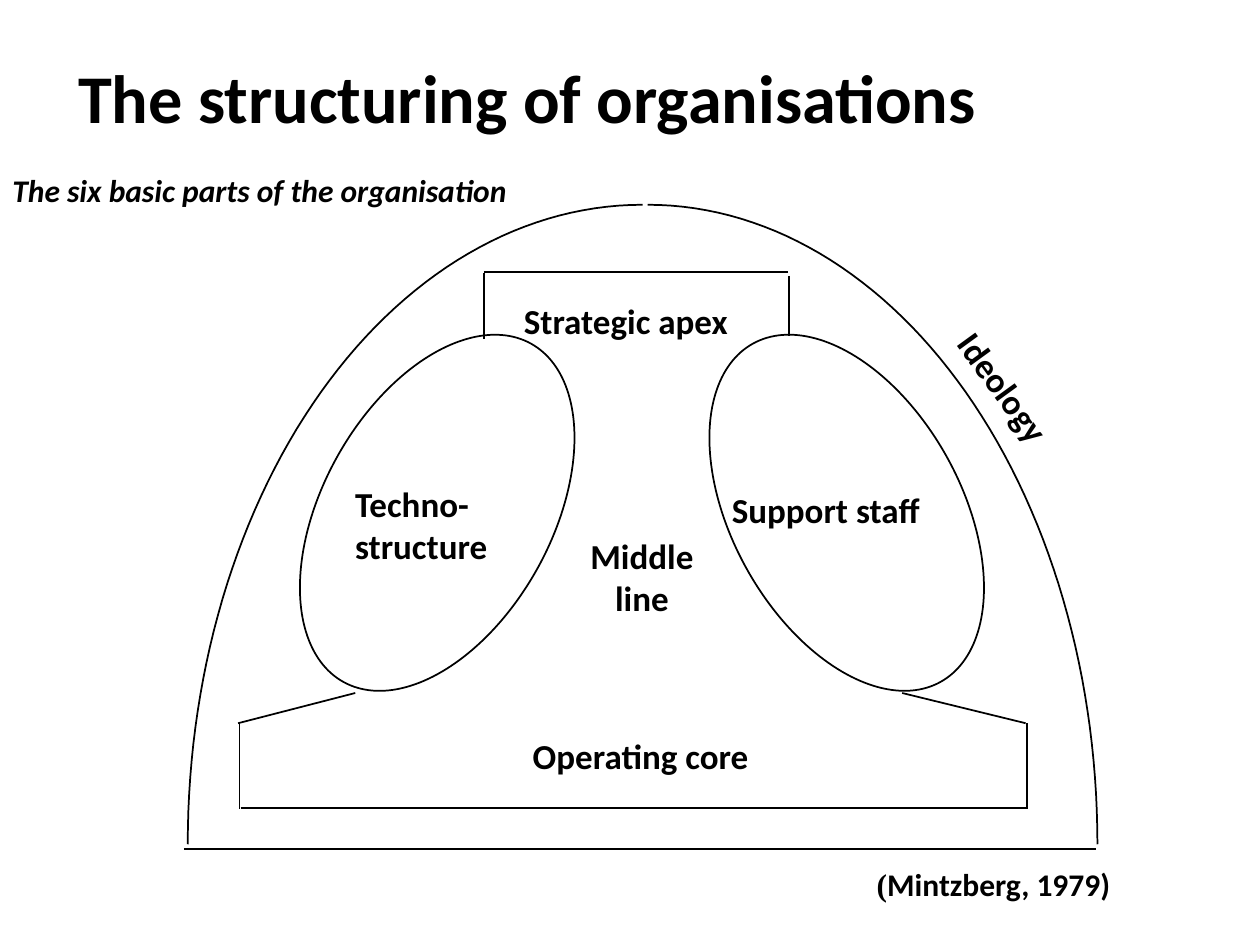
import math

import pptx
import pptx.dml.color
import pptx.enum.shapes
import pptx.enum.text
import pptx.oxml
import pptx.oxml.ns
import pptx.util

COLORS = {"ink": "000000"}
COLUMNS, ROWS = 100, 75
TITLE_ONLY = 5


class Diagram:
    """Style and current slide; all lengths are grid columns and rows."""

    font = "Calibri"
    line_width = pptx.util.Pt(1)
    ink = pptx.dml.color.RGBColor.from_string(COLORS["ink"])

    def __init__(self, deck):
        self.slide = deck.slides.add_slide(deck.slide_layouts[TITLE_ONLY])
        self.column = deck.slide_width / COLUMNS
        self.row = deck.slide_height / ROWS

    def place(self, x, y):
        return round(x * self.column), round(y * self.row)

    def outline(self, shape):
        shape.line.color.rgb = self.ink
        shape.line.width = self.line_width

    def set_text(self, frame, paragraphs, size, italic=False, centred=False, margins=(0.1, 0.05)):
        """Fill a frame with paragraphs, each a list of (text, font) runs."""
        frame.word_wrap = False
        frame.auto_size = pptx.enum.text.MSO_AUTO_SIZE.SHAPE_TO_FIT_TEXT
        frame.margin_left = frame.margin_right = pptx.util.Inches(margins[0])
        frame.margin_top = frame.margin_bottom = pptx.util.Inches(margins[1])
        align = pptx.enum.text.PP_ALIGN
        for index, runs in enumerate(paragraphs):
            paragraph = frame.add_paragraph() if index else frame.paragraphs[0]
            paragraph.alignment = align.CENTER if centred else align.LEFT
            for text, font in runs:
                for number, part in enumerate(text.split("\n")):
                    if number:
                        paragraph.add_line_break()
                    run = paragraph.add_run()
                    run.text = part
                    run.font.name = font
                    run.font.size = pptx.util.Pt(size)
                    run.font.bold = True
                    run.font.italic = italic
                    run.font.color.rgb = self.ink

    def title(self, text, x, y, width, height):
        heading = self.slide.shapes.title
        heading.left, heading.top = self.place(x, y)
        heading.width, heading.height = self.place(width, height)
        self.set_text(heading.text_frame, [[(text, self.font)]], 39, margins=(0.09, 0.04))

    def label(self, paragraphs, x, y, width, height, size=20, rotation=0, **style):
        if isinstance(paragraphs, str):
            paragraphs = [[(paragraphs, self.font)]]
        box = self.slide.shapes.add_textbox(*self.place(x, y), *self.place(width, height))
        box.rotation = rotation
        self.set_text(box.text_frame, paragraphs, size, **style)

    def ellipse(self, x, y, width, height, rotation):
        oval = self.slide.shapes.add_shape(
            pptx.enum.shapes.MSO_SHAPE.OVAL, *self.place(x, y), *self.place(width, height))
        oval.rotation = rotation
        oval.shadow.inherit = False
        oval.fill.background()
        self.outline(oval)

    def line(self, start, end):
        edge = self.slide.shapes.add_connector(
            pptx.enum.shapes.MSO_CONNECTOR.STRAIGHT, *self.place(*start), *self.place(*end))
        self.outline(edge)
        edge._element.spPr.append(pptx.oxml.parse_xml(
            f"<a:effectLst {pptx.oxml.ns.nsdecls('a')}/>"))

    def quarter_arc(self, centre, radius_x, radius_y, steps=60):
        """Draw from the top of an ellipse to its side; a negative radius_x goes left."""
        angles = [math.pi / 2 * step / steps for step in range(steps + 1)]
        points = [self.place(centre[0] + radius_x * math.sin(angle),
                             centre[1] - radius_y * math.cos(angle)) for angle in angles]
        builder = self.slide.shapes.build_freeform(*points[0])
        builder.add_line_segments(points[1:], close=False)
        arc = builder.convert_to_shape()
        arc.shadow.inherit = False
        arc.fill.background()
        self.outline(arc)


def main():
    deck = pptx.Presentation()
    deck.slide_width = pptx.util.Inches(10)
    deck.slide_height = pptx.util.Inches(7.5)
    diagram = Diagram(deck)
    font = diagram.font

    diagram.title("The structuring of organisations", 5.3, 3.9, 73.8, 7.5)
    diagram.label("The six basic parts of the organisation", 0, 13.1, 42.3, 4, size=18, italic=True)
    diagram.label([[("(", "Times New Roman"), ("Mintzberg, 1979)", font)]],
                  68.6, 68.2, 20.7, 4, size=18)

    for left, tilt in ((25.6, 29), (58.1, 331)):
        diagram.ellipse(left, 25.35, 18.2, 30.7, tilt)

    apex = [((38.4, 26.9), (38.4, 21.7)),
            ((38.4, 21.6), (62.5, 21.6)),
            ((62.6, 21.9), (62.6, 26.7))]
    core = [((28.2, 55), (18.9, 57.4)),
            ((19, 64.2), (19, 57.4)),
            ((19.1, 64.1), (81.4, 64.1)),
            ((81.5, 64.2), (81.5, 57.4)),
            ((71.6, 55), (81.4, 57.4))]
    ideology_base = ((14.6, 67.4), (87, 67.4))
    for start, end in [*apex, *core, ideology_base]:
        diagram.line(start, end)

    for centre_x, radius in ((51.4, 35.7), (51, -36.1)):
        diagram.quarter_arc((centre_x, 67), radius, 50.75)

    diagram.label("Strategic apex", 40.6, 23.3, 18.3, 4.3)
    diagram.label("Techno-\nstructure", 27.2, 37.8, 12.6, 7.7)
    diagram.label("Support staff", 57.1, 38.3, 17.3, 4.3)
    diagram.label([[("Middle ", font)], [("line", font)]], 45.8, 41.9, 10.3, 7.7, centred=True)
    diagram.label("Operating core", 41.3, 57.8, 19.3, 4.3)
    diagram.label("Ideology", 73.7, 28.6, 12, 4.3, rotation=54)

    deck.save("out.pptx")


if __name__ == "__main__":
    main()
